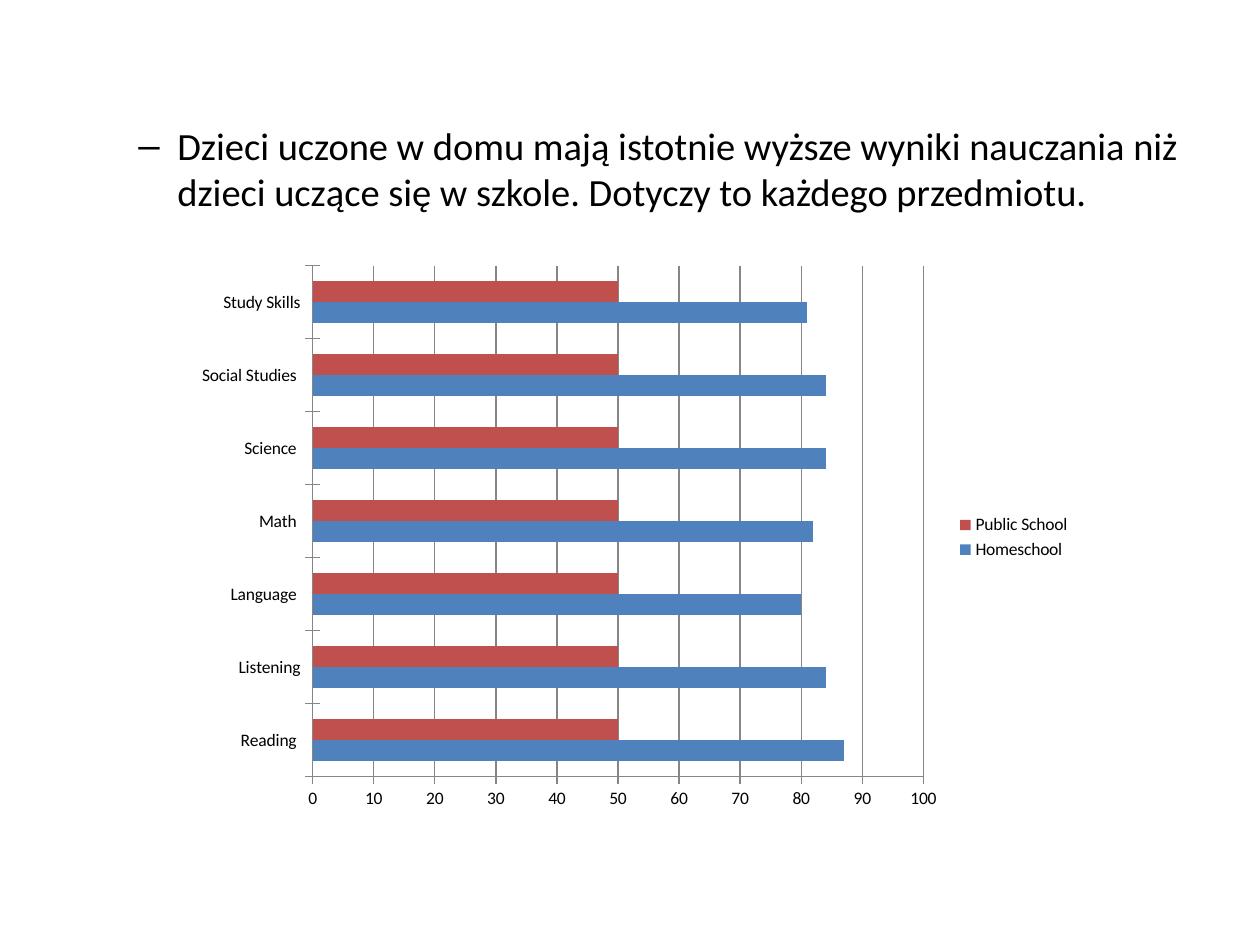
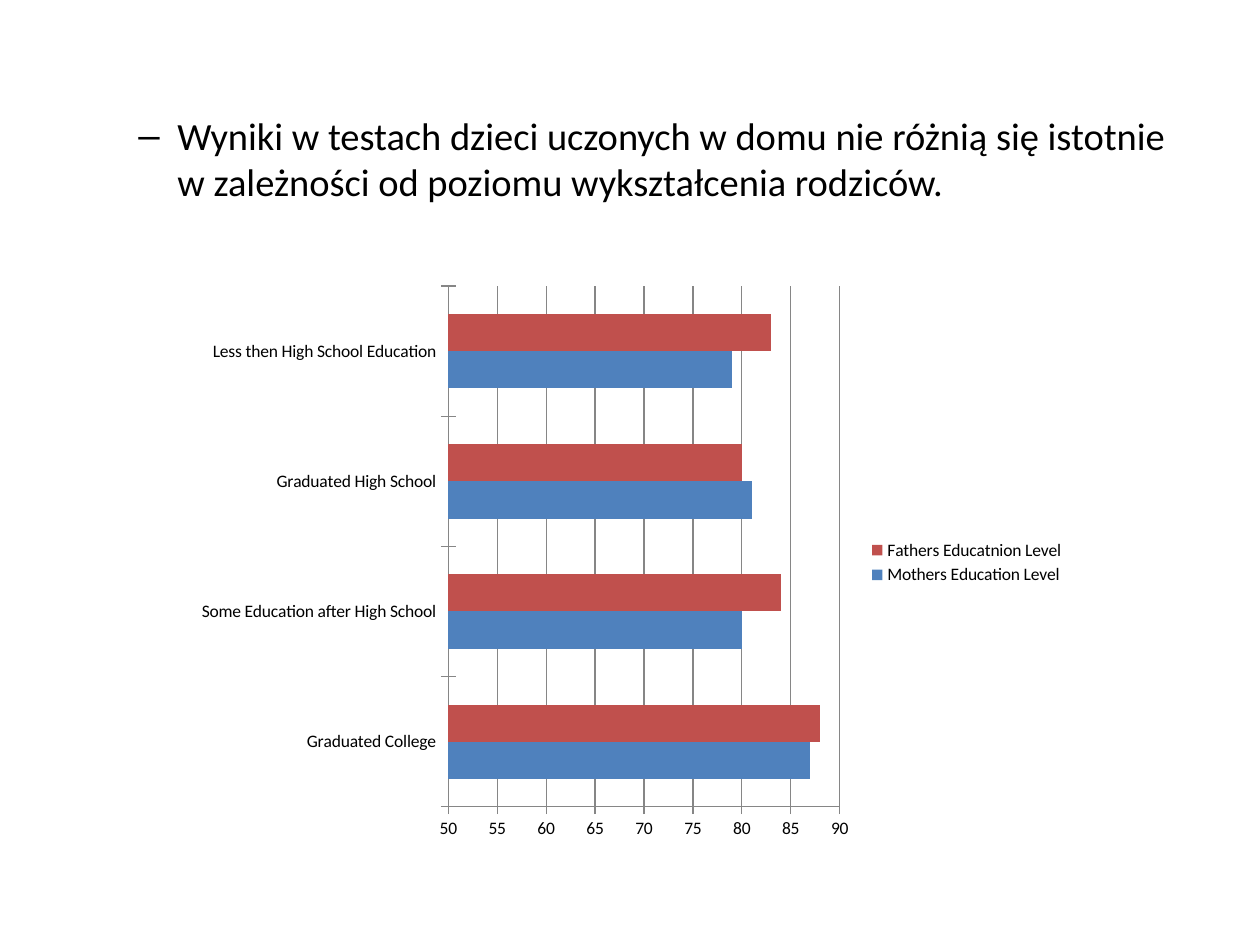
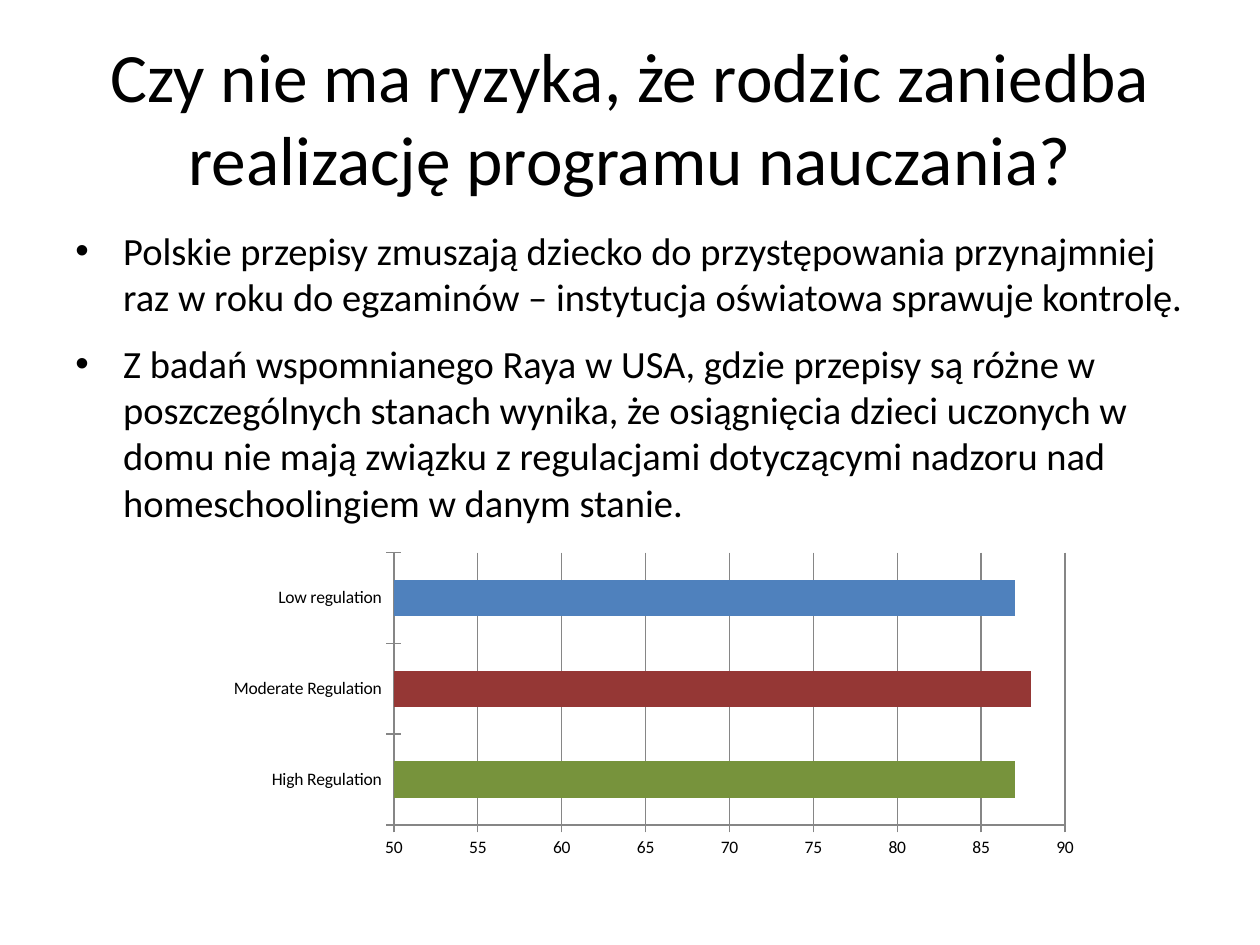
from dataclasses import dataclass

from lxml.etree import SubElement
from pptx import Presentation
from pptx.chart.data import CategoryChartData
from pptx.dml.color import RGBColor
from pptx.enum.chart import XL_CHART_TYPE, XL_LEGEND_POSITION, XL_TICK_MARK
from pptx.enum.text import MSO_ANCHOR, PP_ALIGN
from pptx.oxml.ns import qn
from pptx.util import Inches, Pt


@dataclass(frozen=True)
class Theme:
    font: str = "Calibri"
    text: str = "000000"
    axis: str = "868686"
    series: tuple = ("4F81BD", "C0504D")
    title_size: float = 39.6
    body_size: float = 22
    chart_size: float = 10


THEME = Theme()
DASH = {"char": "–", "left": 0.81, "hang": 0.31, "before": 20, "after": 0}
DOT = {"char": "•", "left": 0.38, "hang": 0.38, "before": 0, "after": 12}

SLIDES = [
    {
        "body": [
            "Dzieci uczone w domu mają istotnie wyższe wyniki nauczania niż "
            "dzieci uczące się w szkole. Dotyczy to każdego przedmiotu.",
        ],
        "body_at": (0.5, 0.92, 9, 5.78),
        "bullet": DASH,
        "chart": {
            "at": (1.46, 2.02, 7.17, 4.49),
            "categories": ["Reading ", "Listening", "Language ", "Math ",
                           "Science ", "Social Studies ", "Study Skills"],
            "series": {"Homeschool ": (87, 84, 80, 82, 84, 84, 81),
                       "Public School ": (50, 50, 50, 50, 50, 50, 50)},
            "scale": (0, 100, 10),
        },
    },
    {
        "body": [
            "Wyniki w testach dzieci uczonych w domu nie różnią się istotnie "
            "w zależności od poziomu wykształcenia rodziców.",
        ],
        "body_at": (0.5, 0.84, 9, 5.86),
        "bullet": DASH,
        "chart": {
            "at": (1.46, 2.18, 7.09, 4.57),
            "categories": ["Graduated College", "Some Education after High School",
                           "Graduated High School", "Less then High School Education"],
            "series": {"Mothers Education Level": (87, 80, 81, 79),
                       "Fathers Educatnion Level": (88, 84, 80, 83)},
            "scale": (50, 90, 5),
        },
    },
    {
        "title": "Czy nie ma ryzyka, że rodzic zaniedba realizację programu nauczania?",
        "title_at": (0.5, 0.3, 9, 1.25),
        "body": [
            "Polskie przepisy zmuszają dziecko do przystępowania przynajmniej raz "
            "w roku do egzaminów – instytucja oświatowa sprawuje kontrolę.",
            "Z badań wspomnianego Raya w USA, gdzie przepisy są różne w "
            "poszczególnych stanach wynika, że osiągnięcia dzieci uczonych w domu "
            "nie mają związku z regulacjami dotyczącymi nadzoru nad "
            "homeschoolingiem w danym stanie.",
        ],
        "body_at": (0.5, 1.75, 9, 4.95),
        "bullet": DOT,
        "chart": {
            "at": (0.98, 4.38, 7.95, 2.52),
            "categories": ["High Regulation", "Moderate Regulation", "Low regulation"],
            "series": {"Series 1": (87, 88, 87)},
            "scale": (50, 90, 5),
            "point_colors": ("77933C", "953735"),
            "plot_area": {"x": 0.27, "y": 0, "w": 0.67, "h": 0.86},
        },
    },
]


def box(at):
    return [Inches(v) for v in at]


def style_font(font, size):
    for name, value in {"name": THEME.font, "size": Pt(size)}.items():
        setattr(font, name, value)
    font.color.rgb = RGBColor.from_string(THEME.text)


def paint(fmt, color):
    fmt.fill.solid()
    fmt.fill.fore_color.rgb = RGBColor.from_string(color)


def set_bullet(p, bullet):
    pPr = p._p.get_or_add_pPr()
    pPr.set("marL", str(Inches(bullet["left"])))
    pPr.set("indent", str(-Inches(bullet["hang"])))
    before = SubElement(pPr, qn("a:spcBef"))
    SubElement(before, qn("a:spcPct")).set("val", str(bullet["before"] * 1000))
    p.space_after = Pt(bullet["after"])
    SubElement(pPr, qn("a:buFont")).set("typeface", "Arial")
    SubElement(pPr, qn("a:buChar")).set("char", bullet["char"])


def add_text(s, at, paragraphs, size, bullet=None):
    tf = s.shapes.add_textbox(*box(at)).text_frame
    tf.word_wrap = True
    for i, text in enumerate(paragraphs):
        p = tf.paragraphs[0] if i == 0 else tf.add_paragraph()
        r = p.add_run()
        r.text = text
        style_font(r.font, size)
        if bullet:
            set_bullet(p, bullet)
    return tf


def add_title(s, at, text):
    tf = add_text(s, at, [text], THEME.title_size)
    tf.vertical_anchor = MSO_ANCHOR.MIDDLE
    tf.paragraphs[0].alignment = PP_ALIGN.CENTER


def fix_plot_area(chart, area):
    """Pin the inner plot area to fractions of the chart."""
    plot_area = chart.element.find(".//" + qn("c:plotArea"))
    for old in plot_area.findall(qn("c:layout")):
        plot_area.remove(old)
    layout = SubElement(plot_area, qn("c:layout"))
    plot_area.insert(0, layout)
    manual = SubElement(layout, qn("c:manualLayout"))
    values = {"layoutTarget": "inner", "xMode": "edge", "yMode": "edge", **area}
    for tag, value in values.items():
        SubElement(manual, qn("c:" + tag)).set("val", str(value))


def style_axes(chart, scale):
    value_axis = chart.value_axis
    names = ("minimum_scale", "maximum_scale", "major_unit")
    for name, value in zip(names, scale):
        setattr(value_axis, name, value)
    value_axis.has_major_gridlines = True
    for axis in (chart.category_axis, value_axis):
        axis.major_tick_mark = XL_TICK_MARK.CROSS
        axis.minor_tick_mark = XL_TICK_MARK.NONE
    lines = (chart.category_axis.format.line, value_axis.format.line,
             value_axis.major_gridlines.format.line)
    for line in lines:
        line.color.rgb = RGBColor.from_string(THEME.axis)
        line.width = Pt(0.75)


def add_bar_chart(s, spec):
    data = CategoryChartData(number_format="General")
    data.categories = spec["categories"]
    for name, values in spec["series"].items():
        data.add_series(name, values)
    chart = s.shapes.add_chart(XL_CHART_TYPE.BAR_CLUSTERED, *box(spec["at"]), data).chart
    style_font(chart.font, THEME.chart_size)
    chart.has_title = False
    chart.has_legend = len(spec["series"]) > 1
    if chart.has_legend:
        chart.legend.position = XL_LEGEND_POSITION.RIGHT
        chart.legend.include_in_layout = False
    style_axes(chart, spec["scale"])

    plot = chart.plots[0]
    plot.vary_by_categories = False
    plot.gap_width = 150
    for series, color in zip(plot.series, THEME.series):
        paint(series.format, color)
    for i, color in enumerate(spec.get("point_colors", ())):
        paint(plot.series[0].points[i].format, color)
    if "plot_area" in spec:
        fix_plot_area(chart, spec["plot_area"])


def main():
    prs = Presentation()
    prs.slide_width, prs.slide_height = Inches(10), Inches(7.5)
    for content in SLIDES:
        s = prs.slides.add_slide(prs.slide_layouts[6])
        if "title" in content:
            add_title(s, content["title_at"], content["title"])
        add_text(s, content["body_at"], content["body"], THEME.body_size, content["bullet"])
        add_bar_chart(s, content["chart"])
    prs.save("out.pptx")


if __name__ == "__main__":
    main()
